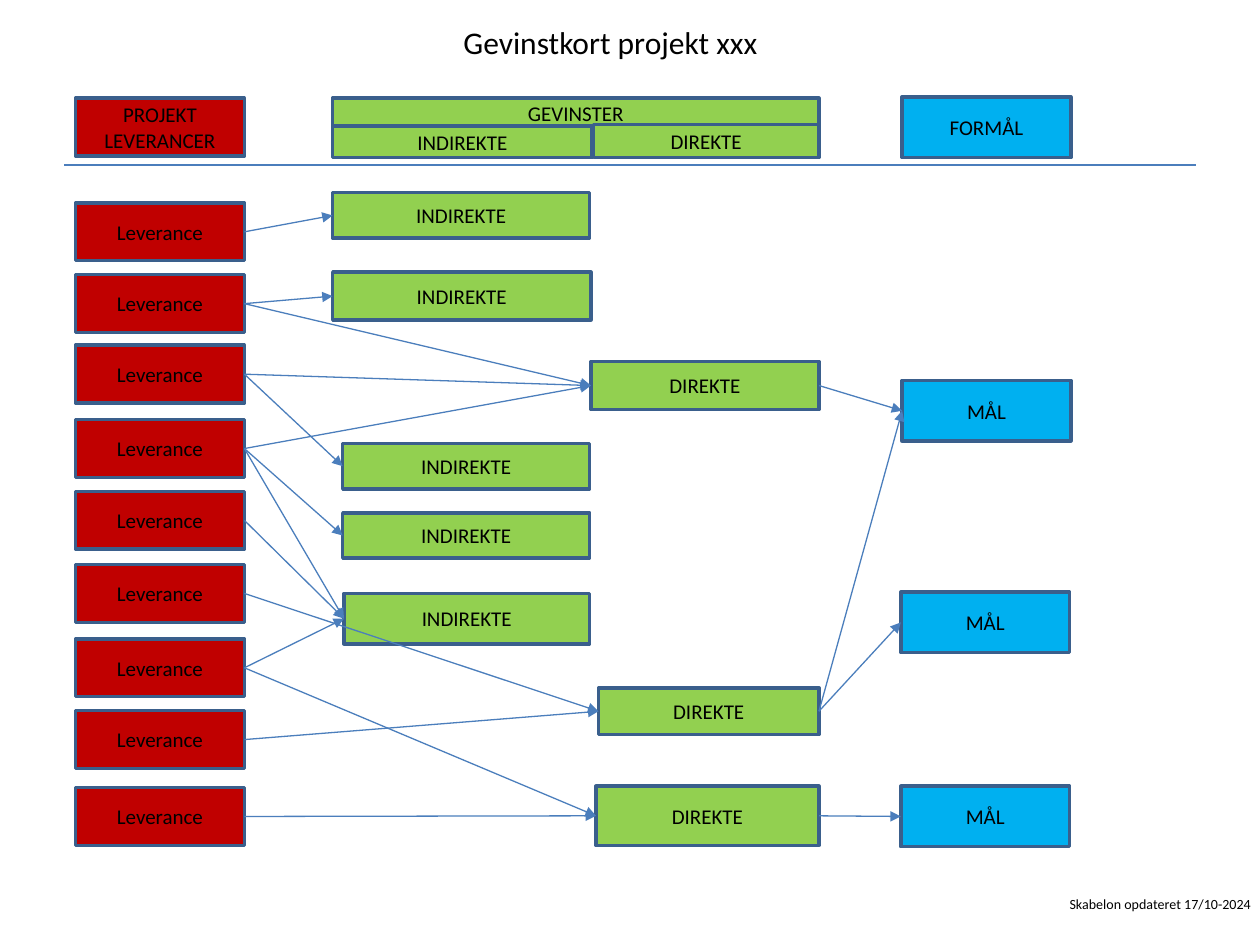
from lxml import etree
from pptx import Presentation
from pptx.dml.color import RGBColor
from pptx.enum.shapes import MSO_CONNECTOR, MSO_SHAPE
from pptx.enum.text import MSO_ANCHOR, PP_ALIGN
from pptx.oxml.ns import qn
from pptx.util import Inches, Pt

RECT = MSO_SHAPE.RECTANGLE
LINE = MSO_CONNECTOR.STRAIGHT
MIDDLE = MSO_ANCHOR.MIDDLE
CENTER, LEFT = PP_ALIGN.CENTER, PP_ALIGN.LEFT
LEFT_SIDE, RIGHT_SIDE = 1, 3
COLORS = {
    "red": "C00000",
    "green": "92D050",
    "blue": "00B0F0",
    "edge": "3A5F8C",
    "link": "4B7EBC",
    "text": "000000",
}


def color(name):
    return RGBColor.from_string(COLORS[name])


def write(frame, lines, size, align):
    frame.word_wrap = True
    for i, line in enumerate(lines):
        para = frame.paragraphs[0] if i == 0 else frame.add_paragraph()
        para.alignment = align
        run = para.add_run()
        run.text = line
        run.font.name = "Calibri"
        run.font.size = Pt(size)
        run.font.color.rgb = color("text")


def add_box(slide, area, fill, *lines):
    box = slide.shapes.add_shape(RECT, *map(Inches, area))
    box.shadow.inherit = False
    box.fill.solid()
    box.fill.fore_color.rgb = color(fill)
    box.line.color.rgb = color("edge")
    box.line.width = Pt(2)
    box.text_frame.vertical_anchor = MIDDLE
    write(box.text_frame, lines, 12, CENTER)
    return box


def add_label(slide, area, text, size, align):
    label = slide.shapes.add_textbox(*map(Inches, area))
    write(label.text_frame, [text], size, align)


def add_line(slide, start, end):
    line = slide.shapes.add_connector(LINE, *map(Inches, start + end))
    line.line.color.rgb = color("link")
    line.line.width = Pt(0.75)
    etree.SubElement(line._element.spPr, qn("a:effectLst"))
    return line


def add_arrow(slide, source, target):
    arrow = add_line(slide, (0, 0), (0, 0))
    arrow.begin_connect(source, RIGHT_SIDE)
    arrow.end_connect(target, LEFT_SIDE)
    ln = arrow.line._get_or_add_ln()
    etree.SubElement(ln, qn("a:tailEnd"), type="triangle")


def add_header(slide, area):
    x, y, w, h = area
    add_box(slide, (x + 2.13, y + 0.01, 3.86, 0.23), "green", "GEVINSTER")
    add_box(slide, (x + 6.65, y, 1.34, 0.48), "blue", "FORMÅL")
    add_box(slide, (x + 0.09, y + 0.01, 1.34, 0.46), "red", "PROJEKT", "LEVERANCER")
    add_box(slide, (x + 2.13, y + 0.23, 2.06, 0.25), "green", "INDIREKTE")
    add_box(slide, (x + 4.2, y + 0.22, 1.79, 0.26), "green", "DIREKTE")
    add_line(slide, (x, y + h), (x + w, y + h))


def add_column(slide, area, fill, text, rows):
    x, y, w, h = area
    return [
        add_box(slide, (x + inset, y + top, w - inset - trim, high or h), fill, text)
        for top, inset, trim, high in rows
    ]


def add_map(slide, area):
    x, y = area[:2]
    tops = [0.08, 0.65, 1.21, 1.8, 2.37, 2.95, 3.54, 4.11, 4.72]
    outs = add_column(slide, (x, y, 1.34, 0.46), "red", "Leverance",
                      [(top, 0, 0, None) for top in tops])
    means = add_column(slide, (x + 2.04, y, 2.05, 0.36), "green", "INDIREKTE", [
        (0, 0, 0.01, None), (0.63, 0, 0, 0.38), (1.99, 0.08, 0.01, None),
        (2.54, 0.08, 0.01, None), (3.18, 0.09, 0.01, 0.4)])
    gains = add_column(slide, (x + 4.09, y, 1.81, 0.37), "green", "DIREKTE", [
        (1.34, 0, 0, 0.38), (3.93, 0.06, 0, None), (4.71, 0.04, 0, 0.47)])
    goals = add_column(slide, (x + 6.55, y, 1.34, 0.48), "blue", "MÅL", [
        (1.49, 0.01, -0.01, None), (3.17, 0, 0, None), (4.71, 0, 0, None)])
    links = [
        (outs, means, [(0, 0), (1, 1), (2, 2), (3, 3), (3, 4), (4, 4), (6, 4)]),
        (outs, gains, [(1, 0), (2, 0), (3, 0), (5, 1), (7, 1), (6, 2), (8, 2)]),
        (gains, goals, [(0, 0), (1, 0), (1, 1), (2, 2)]),
    ]
    for starts, ends, pairs in links:
        for start, end in pairs:
            add_arrow(slide, starts[start], ends[end])


def main():
    deck = Presentation()
    deck.slide_width, deck.slide_height = Inches(10), Inches(7.5)
    slide = deck.slides.add_slide(deck.slide_layouts[6])
    add_header(slide, (0.51, 0.77, 8.98, 0.54))
    add_map(slide, (0.6, 1.53, 7.89, 5.19))
    add_label(slide, (1.94, 0.13, 5.81, 0.4), "Gevinstkort projekt xxx", 18, CENTER)
    add_label(slide, (8.39, 7.06, 1.65, 0.24), "Skabelon opdateret 17/10-2024", 8, LEFT)
    deck.save("out.pptx")


if __name__ == "__main__":
    main()
